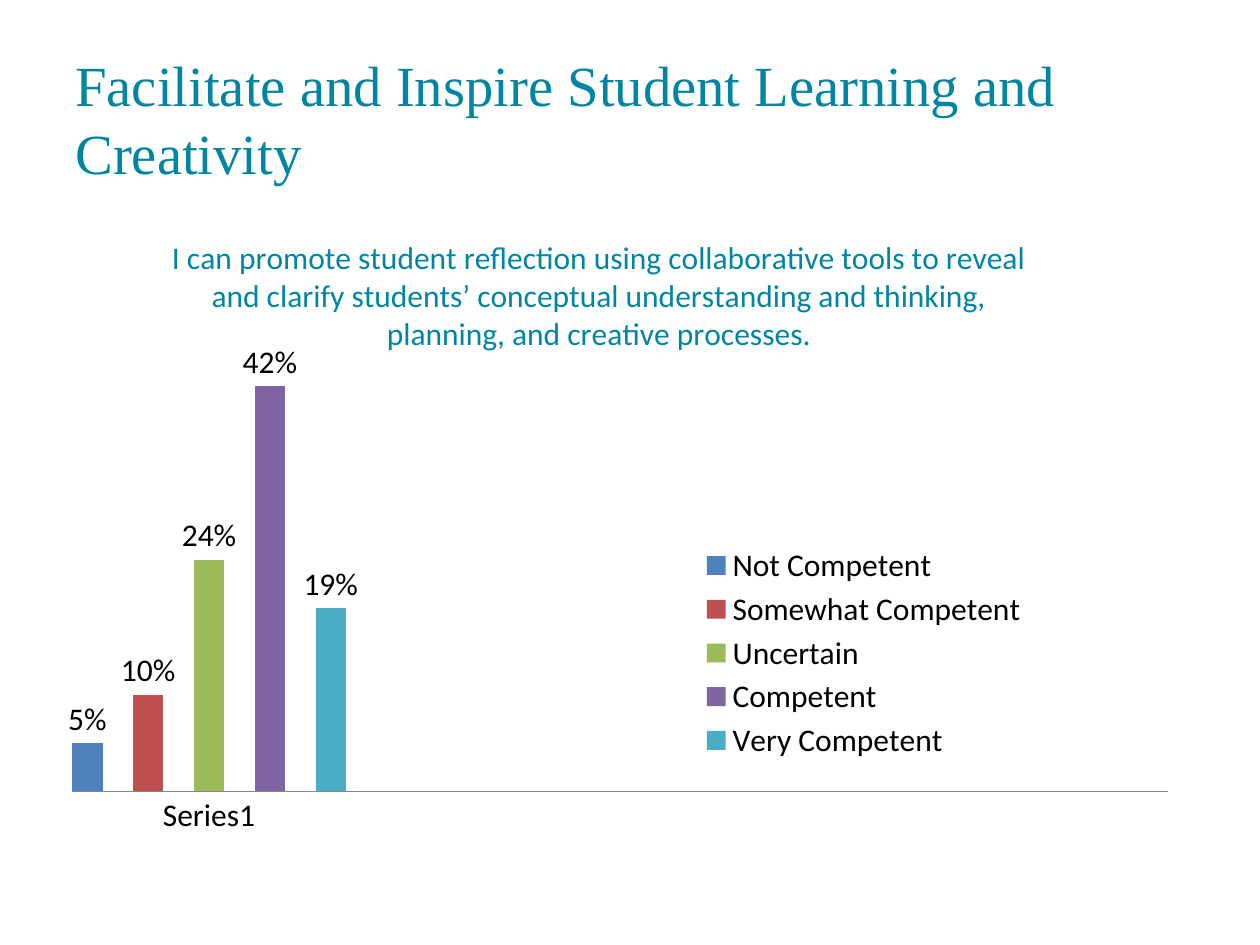
from lxml import etree
from pptx import Presentation
from pptx import util as u
from pptx.chart.data import CategoryChartData
from pptx.dml.color import RGBColor
from pptx.enum import chart as ch, text
from pptx.oxml.ns import qn

TEAL = "0085A2"
BLACK = "000000"
GRAY = "868686"
RATES = [
    ("Not Competent", 0.05, "4F81BD"),
    ("Somewhat Competent", 0.10, "C0504D"),
    ("Uncertain", 0.24, "9BBB59"),
    ("Competent", 0.42, "8064A2"),
    ("Very Competent", 0.19, "4BACC6"),
]
SLOTS = ["Series1", "", "", ""]


def tint(code):
    return RGBColor.from_string(code)


def place(node, index, inner=False, **sides):
    for old in node.findall(qn("c:layout")):
        node.remove(old)
    layout = etree.Element(qn("c:layout"))
    manual = etree.SubElement(layout, qn("c:manualLayout"))
    if inner:
        etree.SubElement(manual, qn("c:layoutTarget")).set("val", "inner")
    for side in "xy":
        etree.SubElement(manual, qn(f"c:{side}Mode")).set("val", "edge")
    for side, share in sides.items():
        etree.SubElement(manual, qn(f"c:{side}")).set("val", str(share))
    node.insert(index, layout)


class Deck:
    head = "Times New Roman"
    body = "Calibri"

    def __init__(self):
        self.prs = Presentation()
        self.prs.slide_width = u.Inches(10)
        self.prs.slide_height = u.Inches(7.5)
        self.slide = self.prs.slides.add_slide(self.prs.slide_layouts[6])

    def box(self, x, y, w, h):
        wide, high = self.prs.slide_width, self.prs.slide_height
        return int(x * wide), int(y * high), int(w * wide), int(h * high)

    def style(self, font, face, size, color):
        font.name = face
        font.size = u.Pt(size)
        font.bold = False
        font.color.rgb = tint(color)

    def run(self, para, words, face, size, color):
        run = para.add_run()
        run.text = words
        self.style(run.font, face, size, color)

    def title(self, words, *area):
        frame = self.slide.shapes.add_textbox(*self.box(*area)).text_frame
        frame.word_wrap = True
        frame.vertical_anchor = text.MSO_ANCHOR.MIDDLE
        self.run(frame.paragraphs[0], words, self.head, 32.4, TEAL)

    def chart(self, words, *area):
        data = CategoryChartData(number_format="0%")
        data.categories = SLOTS
        for name, rate, _ in RATES:
            data.add_series(name, [rate] + [None] * (len(SLOTS) - 1))
        kind = ch.XL_CHART_TYPE.COLUMN_CLUSTERED
        chart = self.slide.shapes.add_chart(kind, *self.box(*area), data).chart
        self.style(chart.font, self.body, 18, BLACK)
        self.bars(chart.plots[0])
        self.axes(chart)

        chart.has_title = True
        head = chart.chart_title
        self.run(head.text_frame.paragraphs[0], words, self.body, 18, TEAL)
        head.include_in_layout = False
        place(head._element, 1, x=0.1, y=0.03)

        chart.has_legend = True
        key = chart.legend
        key.position = ch.XL_LEGEND_POSITION.BOTTOM
        key.include_in_layout = False
        self.style(key.font, self.body, 18, BLACK)
        place(key._element, 1, x=0.57, y=0.53, w=0.29, h=0.36)

        area = chart._chartSpace.chart.plotArea
        place(area, 0, True, x=0.017, y=0.235, w=0.966, h=0.697)

    def bars(self, plot):
        plot.vary_by_categories = False
        plot.gap_width = 0
        plot.overlap = -100
        for series, (_, _, color) in zip(plot.series, RATES):
            series.format.fill.solid()
            series.format.fill.fore_color.rgb = tint(color)
            series.invert_if_negative = False
            labels = series.data_labels
            labels.show_value = True
            labels.number_format = "0%"
            labels.number_format_is_linked = False
            labels.position = ch.XL_LABEL_POSITION.OUTSIDE_END
            self.style(labels.font, self.body, 18, BLACK)

    def axes(self, chart):
        base, scale = chart.category_axis, chart.value_axis
        base.major_tick_mark = ch.XL_TICK_MARK.NONE
        base.format.line.color.rgb = tint(GRAY)
        scale.visible = False
        scale.has_major_gridlines = False
        scale.minimum_scale = 0
        scale.maximum_scale = 0.45


def main():
    deck = Deck()
    deck.title(
        "Facilitate and Inspire Student Learning and Creativity",
        0.05, 0.04, 0.82, 0.17,
    )
    deck.chart(
        "I can promote student reflection using collaborative tools to reveal "
        "and clarify students’ conceptual understanding and thinking, "
        "planning, and creative processes.",
        0.042, 0.223, 0.9, 0.66,
    )
    deck.prs.save("out.pptx")


if __name__ == "__main__":
    main()
